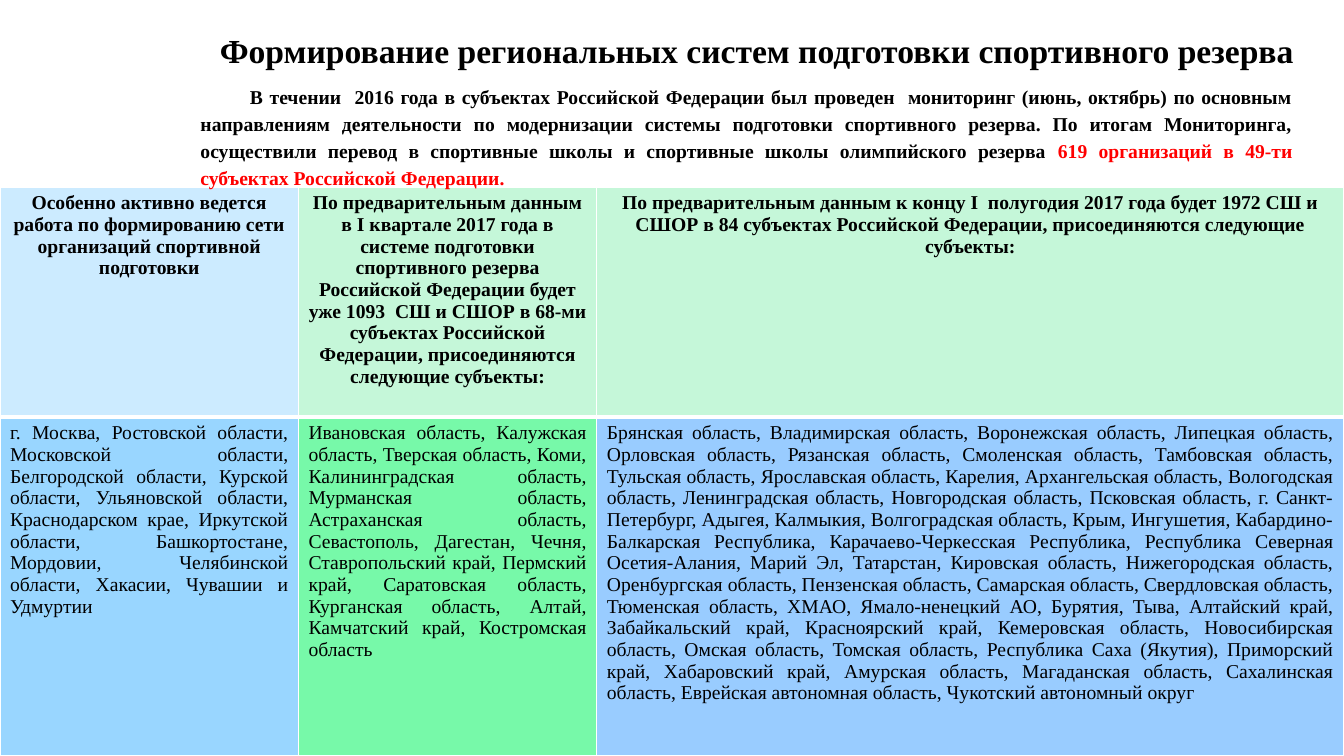
import pptx
import pptx.util
import pptx.dml.color
import pptx.enum.text
import lxml.etree

Inches = pptx.util.Inches
Pt = pptx.util.Pt
Align = pptx.enum.text.PP_ALIGN


def color(code):
    return pptx.dml.color.RGBColor.from_string(code)


def style(para, size, bold, align):
    para.alignment = align
    para.font.name = "Times New Roman"
    para.font.size = Pt(size)
    para.font.bold = bold
    para.font.color.rgb = color("000000")


deck = pptx.Presentation()
deck.slide_width = Inches(13.33)
deck.slide_height = Inches(7.5)
slide = deck.slides.add_slide(deck.slide_layouts[5])

title = slide.shapes.title
title.left, title.top = Inches(1.89), Inches(0.25)
title.width, title.height = Inches(11.23), Inches(0.5)
title.text_frame.auto_size = pptx.enum.text.MSO_AUTO_SIZE.NONE
title.text_frame.text = "Формирование региональных систем подготовки спортивного резерва"
style(title.text_frame.paragraphs[0], 24, True, Align.CENTER)

heads = [
    ("Особенно активно ведется работа по формированию сети организаций спортивной подготовки", "CCEBFF"),
    ("По предварительным данным в I квартале 2017 года в системе подготовки спортивного резерва "
     "Российской Федерации будет уже 1093  СШ и СШОР в 68-ми субъектах Российской Федерации, "
     "присоединяются следующие субъекты:", "C5F7D9"),
    ("По предварительным данным к концу I  полугодия 2017 года будет 1972 СШ и СШОР в 84 субъектах "
     "Российской Федерации, присоединяются следующие субъекты:", "C5F7D9"),
]
later = [
    "Брянская область, Владимирская область, Воронежская область, Липецкая область",
    "Орловская область, Рязанская область, Смоленская область, Тамбовская область",
    "Тульская область, Ярославская область, Карелия, Архангельская область, Вологодская область",
    "Ленинградская область, Новгородская область, Псковская область, г. Санкт-Петербург, Адыгея",
    "Калмыкия, Волгоградская область, Крым, Ингушетия, Кабардино-Балкарская Республика",
    "Карачаево-Черкесская Республика, Республика Северная Осетия-Алания, Марий Эл, Татарстан",
    "Кировская область, Нижегородская область, Оренбургская область, Пензенская область",
    "Самарская область, Свердловская область, Тюменская область, ХМАО, Ямало-ненецкий АО, Бурятия",
    "Тыва, Алтайский край, Забайкальский край, Красноярский край, Кемеровская область",
    "Новосибирская область, Омская область, Томская область, Республика Саха (Якутия)",
    "Приморский край, Хабаровский край, Амурская область, Магаданская область",
    "Сахалинская область, Еврейская автономная область, Чукотский автономный округ",
]
regions = [
    ("г. Москва, Ростовской области, Московской области, Белгородской области, Курской области, "
     "Ульяновской области, Краснодарском крае, Иркутской области, Башкортостане, Мордовии, "
     "Челябинской области, Хакасии, Чувашии и Удмуртии", "99D6FF"),
    ("Ивановская область, Калужская область, Тверская область, Коми, Калининградская область, "
     "Мурманская область, Астраханская область, Севастополь, Дагестан, Чечня, Ставропольский край, "
     "Пермский край, Саратовская область, Курганская область, Алтай, Камчатский край, "
     "Костромская область", "77F9A9"),
    (", ".join(later), "99CCFF"),
]

table = slide.shapes.add_table(2, 3, 0, Inches(1.86), Inches(13.33), Inches(5.64)).table
for column, width in zip(table.columns, (2.96, 2.96, 7.41)):
    column.width = Inches(width)
for row, height in zip(table.rows, (2.28, 3.36)):
    row.height = Inches(height)

space = "http://schemas.openxmlformats.org/drawingml/2006/main"
for y, (row, align) in enumerate(((heads, Align.CENTER), (regions, Align.JUSTIFY))):
    for x, (text, fill) in enumerate(row):
        cell = table.cell(y, x)
        cell.text = text
        style(cell.text_frame.paragraphs[0], 14, y == 0, align)
        props = cell._tc.get_or_add_tcPr()
        for side in ("lnL", "lnR", "lnT", "lnB"):
            middle = (y, side) in ((0, "lnB"), (1, "lnT"))
            line = lxml.etree.SubElement(props, f"{{{space}}}{side}", w=str(Pt(3 if middle else 1)))
            solid = lxml.etree.SubElement(line, f"{{{space}}}solidFill")
            lxml.etree.SubElement(solid, f"{{{space}}}srgbClr", val="FFFFFF")
        cell.fill.solid()
        cell.fill.fore_color.rgb = color(fill)

intro = slide.shapes.add_textbox(Inches(1.89), Inches(0.76), Inches(11.03), Inches(1.48))
intro.text_frame.word_wrap = True
para = intro.text_frame.paragraphs[0]
para._p.get_or_add_pPr().set("indent", str(Inches(0.49)))
para.line_spacing = 1.15
style(para, 14, True, Align.JUSTIFY)
para.add_run().text = (
    "В течении  2016 года в субъектах Российской Федерации был проведен  мониторинг (июнь, октябрь) "
    "по основным направлениям деятельности по модернизации системы подготовки спортивного резерва. "
    "По итогам Мониторинга, осуществили перевод в спортивные школы и спортивные школы "
    "олимпийского резерва ")
result = para.add_run()
result.text = "619 организаций в 49-ти субъектах Российской Федерации."
result.font.color.rgb = color("FF0000")

deck.save("out.pptx")
